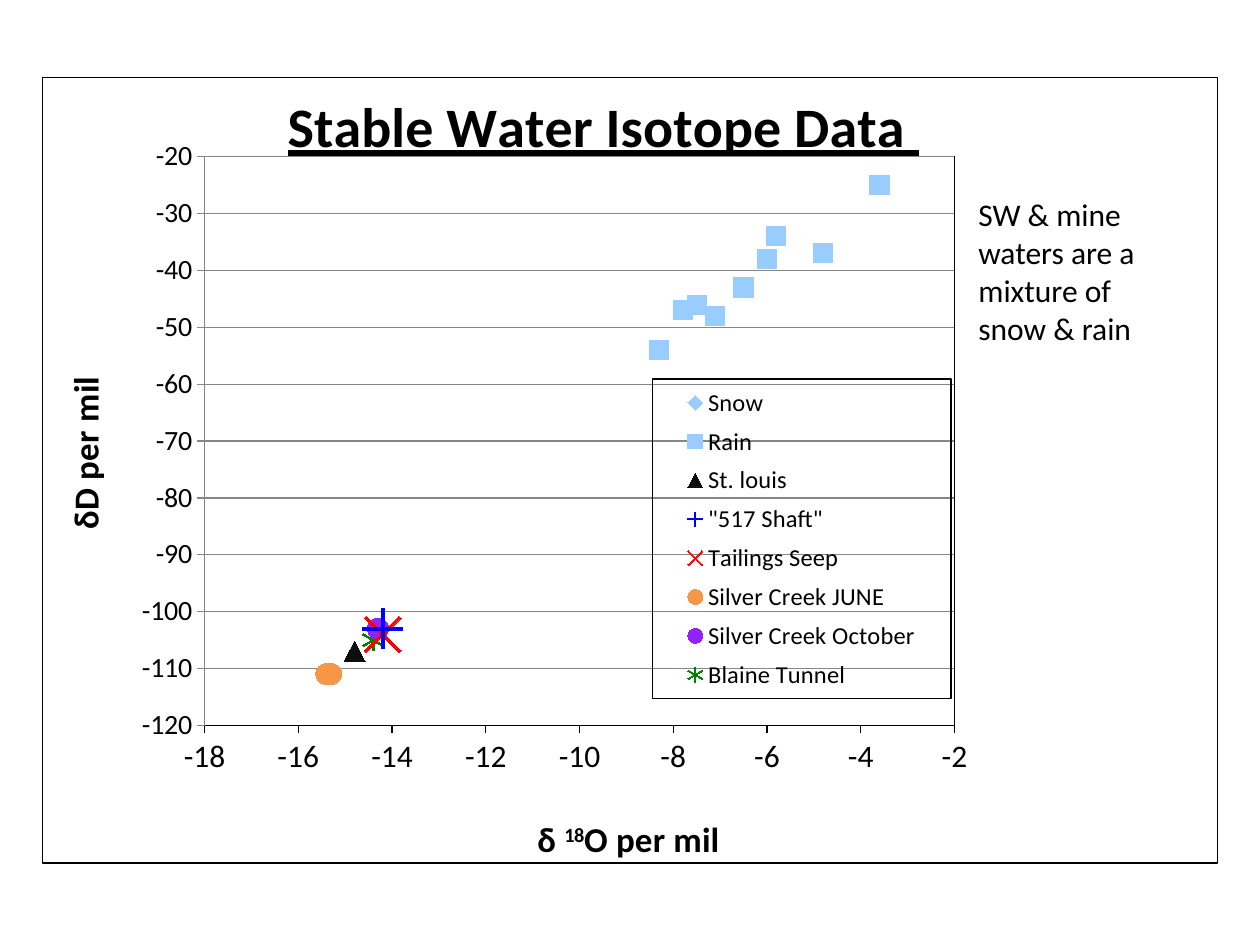
"""Build the stable water isotope scatter slide."""
from lxml.etree import SubElement
from pptx import Presentation
from pptx.chart.data import XyChartData
from pptx.dml.color import RGBColor
from pptx.enum.chart import XL_AXIS_CROSSES as Crosses
from pptx.enum.chart import XL_CHART_TYPE as ChartType
from pptx.enum.chart import XL_LEGEND_POSITION as LegendPosition
from pptx.enum.chart import XL_MARKER_STYLE as Marker
from pptx.enum.chart import XL_TICK_LABEL_POSITION as LabelPosition
from pptx.enum.chart import XL_TICK_MARK as TickMark
from pptx.enum.text import MSO_AUTO_SIZE as AutoSize
from pptx.oxml import parse_xml
from pptx.oxml.ns import nsdecls, qn
from pptx.util import Pt

BLACK = RGBColor(0, 0, 0)
GRAY = RGBColor(0x86, 0x86, 0x86)
SKY = RGBColor(0x99, 0xCC, 0xFF)
COAL = RGBColor(0x0D, 0x0D, 0x0D)
BLUE = RGBColor(0, 0, 0xFF)
RED = RGBColor(0xFF, 0, 0)
ORANGE = RGBColor(0xF7, 0x96, 0x46)
PURPLE = RGBColor(0x94, 0x22, 0xFF)
GREEN = RGBColor(0, 0x80, 0)

RAIN = [(-5.8, -34), (-6, -38), (-3.6, -25), (-7.1, -48), (-7.5, -46),
        (-8.3, -54), (-6.5, -43), (-7.8, -47), (-4.8, -37)]
JUNE = [(x, -111) for x in (-15.3, -15.3, -15.3, -15.4, -15.3, -15.4, -15.3)]
WATERS = [
    ("Snow", [(-20, -150)], Marker.DIAMOND, 14, SKY),
    ("Rain", RAIN, Marker.SQUARE, 11, SKY),
    ("St. louis", [(-14.8, -107)], Marker.TRIANGLE, 12, COAL),
    ('"517 Shaft"', [(-14.2, -103)], Marker.PLUS, 23, BLUE),
    ("Tailings Seep", [(-14.2, -104)], Marker.X, 21, RED),
    ("Silver Creek JUNE", JUNE, Marker.CIRCLE, 12, ORANGE),
    ("Silver Creek October", [(-14.3, -103)], Marker.CIRCLE, 12, PURPLE),
    ("Blaine Tunnel", [(-14.4, -105)], Marker.STAR, 12, GREEN),
]


class IsotopeSlide:
    """Hold the text style and the slide, and add each kind of element."""

    def __init__(self, slide, font_name="Calibri"):
        self.slide = slide
        self.font_name = font_name

    def style(self, font, size, bold=False):
        font.name, font.size, font.bold = self.font_name, Pt(size), bold
        font.color.rgb = BLACK

    def note(self, words, left, top, width, height):
        frame = self.slide.shapes.add_textbox(Pt(left), Pt(top), Pt(width), Pt(height)).text_frame
        frame.word_wrap = True
        frame.auto_size = AutoSize.SHAPE_TO_FIT_TEXT
        frame.text = words
        self.style(frame.paragraphs[0].font, 18)

    def place(self, part, index, x, y, width=None, height=None, inner=False):
        for old in part.findall(qn("c:layout")):
            part.remove(old)
        layout = parse_xml(f"<c:layout {nsdecls('c')}><c:manualLayout/></c:layout>")
        settings = [("layoutTarget", "inner" if inner else None), ("xMode", "edge"),
                    ("yMode", "edge"), ("x", x), ("y", y), ("w", width), ("h", height)]
        for tag, value in settings:
            if value is not None:
                SubElement(layout[0], qn(f"c:{tag}")).set("val", str(value))
        part.insert(index, layout)

    def outline(self, part):
        border = parse_xml(
            f'<c:spPr {nsdecls("c", "a")}><a:noFill/><a:ln w="9525"><a:solidFill>'
            f'<a:srgbClr val="{BLACK}"/></a:solidFill></a:ln></c:spPr>')
        text_style = part.find(qn("c:txPr"))
        if text_style is None:
            part.append(border)
        else:
            text_style.addprevious(border)

    def heading(self, title, pieces, size, x, y, underline=None):
        paragraph = title.text_frame.paragraphs[0]
        for words, baseline in pieces:
            run = paragraph.add_run()
            run.text = words
            if baseline:
                run._r.get_or_add_rPr().set("baseline", str(baseline))
        self.style(paragraph.font, size, True)
        paragraph.font.underline = underline
        self.place(title._element, 1, x, y)

    def axis(self, axis, low, high, step, size, color, width):
        axis.minimum_scale, axis.maximum_scale, axis.major_unit = low, high, step
        axis.crosses = Crosses.MINIMUM
        axis.major_tick_mark, axis.minor_tick_mark = TickMark.OUTSIDE, TickMark.NONE
        axis.tick_label_position = LabelPosition.LOW
        axis.tick_labels.number_format = "General"
        axis.tick_labels.number_format_is_linked = False
        self.style(axis.tick_labels.font, size)
        axis.format.line.color.rgb = color
        axis.format.line.width = Pt(width)

    def legend(self, chart):
        chart.has_legend = True
        legend = chart.legend
        legend.position = LegendPosition.RIGHT
        legend.include_in_layout = True
        self.style(legend.font, 14)
        self.place(legend._element, 1, 0.519, 0.384, 0.254, 0.407)
        self.outline(legend._element)

    def scatter(self, waters, left, top, width, height):
        data = XyChartData()
        for name, points, *_ in waters:
            water = data.add_series(name)
            for x, y in points:
                water.add_data_point(x, y)
        chart = self.slide.shapes.add_chart(
            ChartType.XY_SCATTER, Pt(left), Pt(top), Pt(width), Pt(height), data).chart
        self.style(chart.font, 10)
        chart.plots[0].vary_by_categories = False
        for series, (_, _, shape, size, color) in zip(chart.plots[0].series, waters):
            series.smooth = False
            series.format.line.fill.background()
            series.marker.style, series.marker.size = shape, size
            series.marker.format.fill.solid()
            series.marker.format.fill.fore_color.rgb = color
            series.marker.format.line.color.rgb = color

        oxygen, deuterium = chart.category_axis, chart.value_axis
        self.axis(oxygen, -18, -2, 2, 18, BLACK, 0.75)
        self.axis(deuterium, -120, -20, 10, 16, GRAY, 0.75)
        oxygen.has_major_gridlines = False
        deuterium.has_major_gridlines = True
        deuterium.major_gridlines.format.line.color.rgb = GRAY
        deuterium.major_gridlines.format.line.width = Pt(0.75)

        self.heading(chart.chart_title, [("Stable Water Isotope Data ", None)],
                     32, 0.2, -0.014, True)
        self.heading(oxygen.axis_title, [("δ ", None), ("18", 30000), ("O per mil", None)],
                     20, 0.418, 0.936)
        self.heading(deuterium.axis_title, [("δD per mil", None)], 20, 0.01, 0.374)
        deuterium.axis_title.text_frame._txBody.bodyPr.set("rot", "-5400000")

        self.legend(chart)
        space = chart._chartSpace
        plot_area = space.chart.plotArea
        self.place(plot_area, 0, 0.138, 0.101, 0.638, 0.724, inner=True)
        self.outline(plot_area)
        self.outline(space)


def main():
    deck = Presentation()
    deck.slide_width, deck.slide_height = Pt(720), Pt(540)
    page = IsotopeSlide(deck.slides.add_slide(deck.slide_layouts[6]))
    page.scatter(WATERS, 23.8, 43.9, 672.5, 452.2)
    page.note("SW & mine waters are a mixture of snow & rain", 552, 108, 126, 94.5)
    deck.save("out.pptx")


if __name__ == "__main__":
    main()
